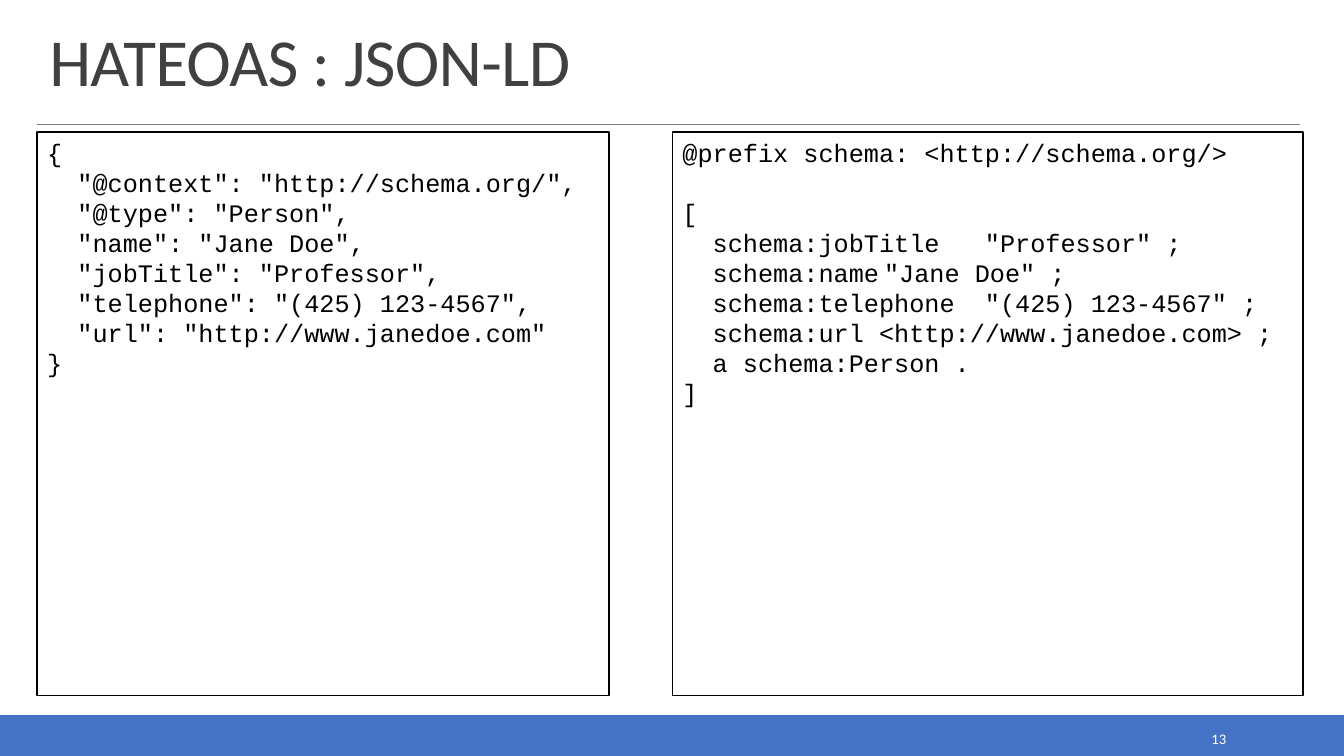
from dataclasses import dataclass

from lxml import etree
from pptx import Presentation
from pptx.dml.color import RGBColor
from pptx.enum.shapes import MSO_CONNECTOR, MSO_SHAPE
from pptx.enum.text import MSO_ANCHOR, PP_ALIGN
from pptx.oxml.ns import qn
from pptx.util import Inches, Pt

RECTANGLE = MSO_SHAPE.RECTANGLE
STRAIGHT = MSO_CONNECTOR.STRAIGHT
TOP, MIDDLE, BOTTOM = MSO_ANCHOR.TOP, MSO_ANCHOR.MIDDLE, MSO_ANCHOR.BOTTOM
LEFT, RIGHT = PP_ALIGN.LEFT, PP_ALIGN.RIGHT


@dataclass(frozen=True)
class Theme:
    accent: RGBColor = RGBColor(0x44, 0x72, 0xC4)
    rule: RGBColor = RGBColor(0x80, 0x80, 0x80)
    heading: RGBColor = RGBColor(0x40, 0x40, 0x40)
    ink: RGBColor = RGBColor(0, 0, 0)
    paper: RGBColor = RGBColor(255, 255, 255)
    body_font: str = "Calibri"
    code_font: str = "Courier New"
    title_size: float = 48
    code_size: float = 18
    code_leading: float = 21.5
    number_size: float = 10.5
    border: float = 1.25
    hairline: float = 0.5


THEME = Theme()
SLIDE_WIDTH, SLIDE_HEIGHT = 13.33, 7.5
CODE_INDENT = 0.3
VALUE_COLUMN = 3.0

# Each line of code: (indent level, text). None leaves one line free.
JSON_LD = [
    (0, '{'),
    (1, '"@context": "http://schema.org/",'),
    (1, '"@type": "Person",'),
    (1, '"name": "Jane Doe",'),
    (1, '"jobTitle": "Professor",'),
    (1, '"telephone": "(425) 123-4567",'),
    (1, '"url": "http://www.janedoe.com"'),
    (0, '}'),
]
TURTLE = [
    (0, '@prefix schema: <http://schema.org/>'),
    None,
    (0, '['),
    (1, 'schema:jobTitle\t"Professor" ;'),
    (1, 'schema:name\t"Jane Doe" ;'),
    (1, 'schema:telephone\t"(425) 123-4567" ;'),
    (1, 'schema:url <http://www.janedoe.com> ;'),
    (1, 'a schema:Person .'),
    (0, ']'),
]


def write(paragraph, text, *, font, size, color, align=LEFT, leading=None,
          before=0, indent=0, tab=None, tracking=None):
    paragraph.alignment = align
    paragraph.space_before = Pt(before)
    if leading is not None:
        paragraph.line_spacing = leading
    properties = paragraph._p.get_or_add_pPr()
    properties.set("marL", "0")
    properties.set("indent", str(Inches(indent)))
    if tab is not None:
        stops = etree.SubElement(properties, qn("a:tabLst"))
        etree.SubElement(stops, qn("a:tab"), pos=str(Inches(tab)), algn="l")
    run = paragraph.add_run()
    run.text = text
    run.font.name = font
    run.font.size = Pt(size)
    run.font.color.rgb = color
    if tracking is not None:
        run.font._element.set("spc", str(round(tracking * 100)))


def add_frame(slide, box, anchor):
    """Adds an empty text box and returns its text frame."""
    frame = slide.shapes.add_textbox(*map(Inches, box)).text_frame
    frame.word_wrap = True
    frame.vertical_anchor = anchor
    return frame


def add_rectangle(slide, box, *, line, fill=None):
    rectangle = slide.shapes.add_shape(RECTANGLE, *map(Inches, box))
    rectangle.shadow.inherit = False
    if fill is None:
        rectangle.fill.background()
    else:
        rectangle.fill.solid()
        rectangle.fill.fore_color.rgb = fill
    rectangle.line.color.rgb = line
    rectangle.line.width = Pt(THEME.border)
    return rectangle


def add_header(slide, box, title):
    """Sets the title above a thin rule on the bottom edge of the box."""
    left, top, width, height = box
    bottom = top + height
    rule = slide.shapes.add_connector(
        STRAIGHT, Inches(left), Inches(bottom), Inches(left + width), Inches(bottom))
    rule.line.color.rgb = THEME.rule
    rule.line.width = Pt(THEME.hairline)
    etree.SubElement(rule._element.spPr, qn("a:effectLst"))
    frame = add_frame(slide, (left + 0.02, top, width, height - 0.19), BOTTOM)
    write(frame.paragraphs[0], title, font=THEME.body_font, size=THEME.title_size,
          color=THEME.heading, leading=0.85, tracking=-0.5)


def add_footer(slide, box, number):
    left, top, width, height = box
    add_rectangle(slide, box, line=THEME.accent, fill=THEME.accent)
    number_box = (left + width - 2.5, top + 0.09, 1.43, height - 0.12)
    frame = add_frame(slide, number_box, MIDDLE)
    write(frame.paragraphs[0], number, font=THEME.body_font, size=THEME.number_size,
          color=THEME.paper, align=RIGHT)


def add_code_panel(slide, box, code):
    frame = add_rectangle(slide, box, line=THEME.ink).text_frame
    frame.word_wrap = True
    frame.vertical_anchor = TOP
    paragraph, gap = frame.paragraphs[0], 0
    for line in code:
        if line is None:
            gap += THEME.code_leading
            continue
        level, text = line
        paragraph = paragraph or frame.add_paragraph()
        write(paragraph, text, font=THEME.code_font, size=THEME.code_size,
              color=THEME.ink, leading=Pt(THEME.code_leading), before=gap,
              indent=level * CODE_INDENT, tab=VALUE_COLUMN if "\t" in text else None)
        paragraph, gap = None, 0


def main():
    presentation = Presentation()
    presentation.slide_width = Inches(SLIDE_WIDTH)
    presentation.slide_height = Inches(SLIDE_HEIGHT)
    slide = presentation.slides.add_slide(presentation.slide_layouts[6])
    add_footer(slide, (0, 7.1, SLIDE_WIDTH, 0.4), "13")
    add_header(slide, (0.37, 0.2, 12.52, 1.03), "HATEOAS : JSON-LD")
    add_code_panel(slide, (0.37, 1.31, 5.67, 5.59), JSON_LD)
    add_code_panel(slide, (6.67, 1.31, 6.25, 5.59), TURTLE)
    presentation.save("out.pptx")


if __name__ == "__main__":
    main()
